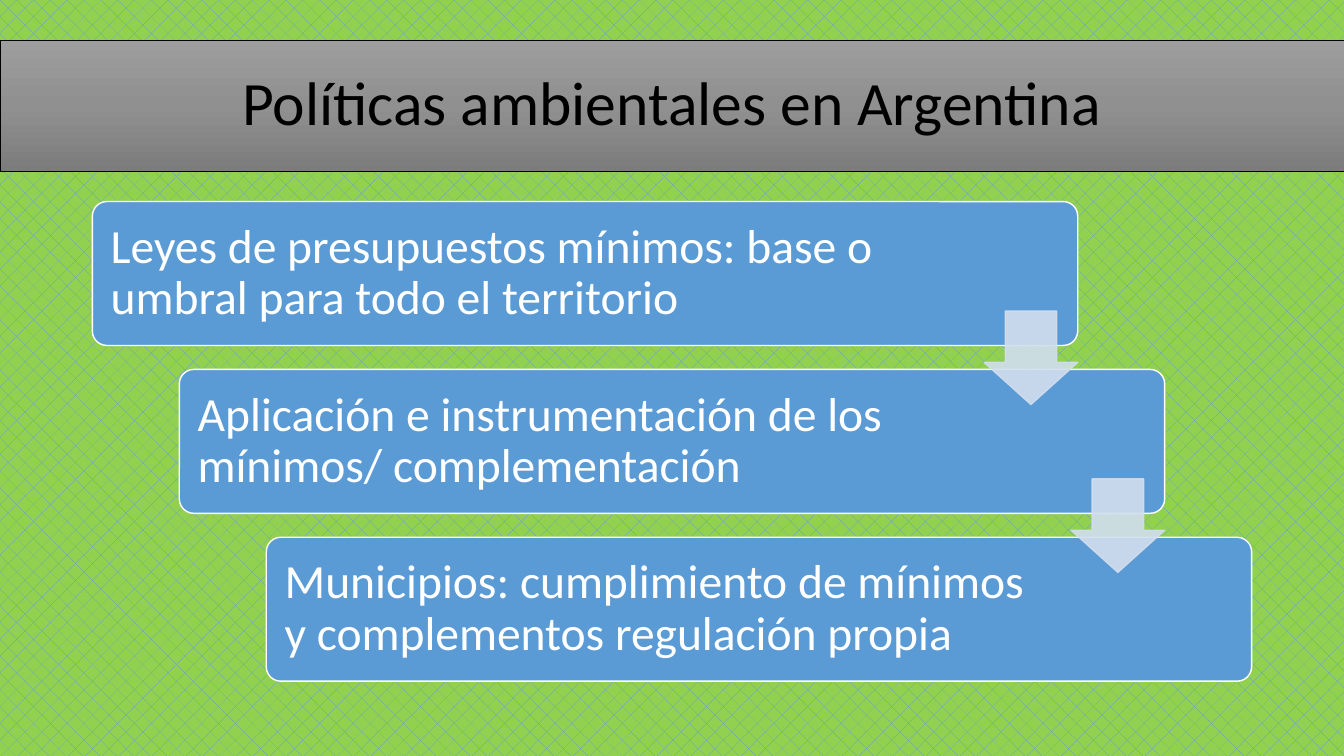
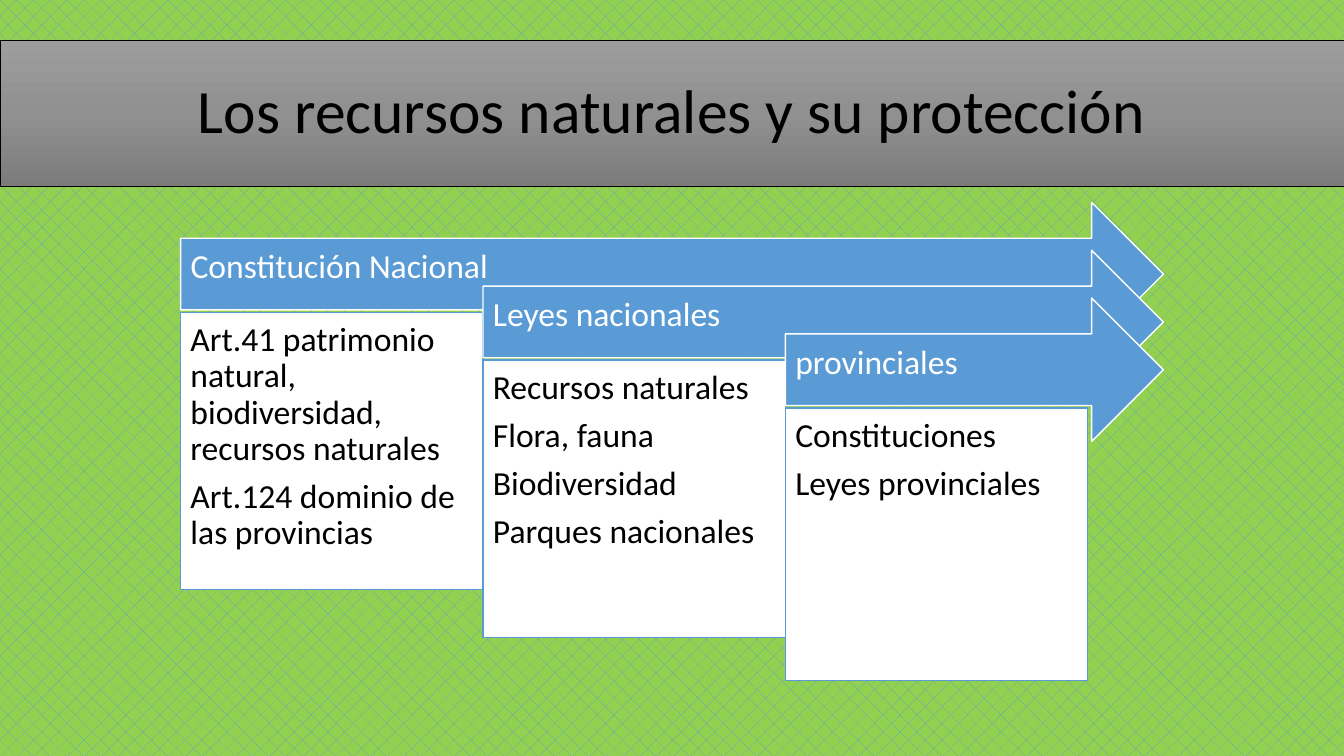
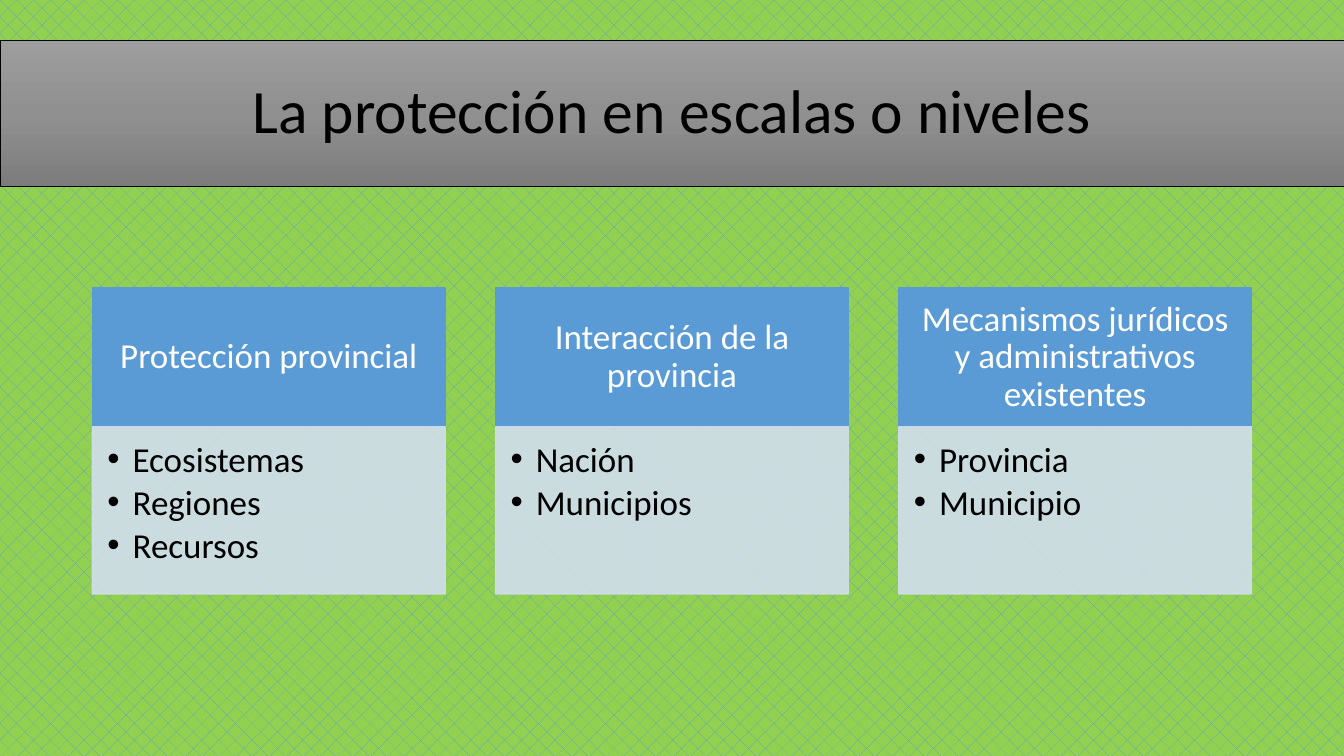
from collections import namedtuple
from copy import deepcopy

from lxml.etree import SubElement
from pptx import Presentation
from pptx.dml.color import RGBColor
from pptx.enum.dml import MSO_PATTERN
from pptx.enum.shapes import MSO_SHAPE
from pptx.enum.text import MSO_ANCHOR, PP_ALIGN
from pptx.oxml.ns import qn
from pptx.util import Inches, Pt

# The slide is a grid of 160 columns by 90 rows, twelve cells to the inch.
COLUMNS, ROWS = 160, 90
CELL = Inches(1) / 12
FONT = "Calibri"
COLORS = {
    "green": "92D050",
    "blue": "5B9BD5",
    "pale": "D2DEEF",
    "white": "FFFFFF",
    "black": "000000",
}
BAND_STOPS = [(0, "9D9D9D"), (0.5, "909090"), (1, "7C7C7C")]
PALE_OPACITY = 90

Box = namedtuple("Box", "left top width height")


def rgb(name):
    return RGBColor.from_string(COLORS[name])


def add_box(page, kind, box, fill=None, line="white", line_width=1,
            adjust=(), opacity=100):
    """Add a preset shape; the box is in grid cells."""
    shape = page.shapes.add_shape(kind, *(round(cells * CELL) for cells in box))
    shape.shadow.inherit = False
    for index, value in enumerate(adjust):
        shape.adjustments[index] = value
    if fill:
        shape.fill.solid()
        shape.fill.fore_color.rgb = rgb(fill)
    shape.line.color.rgb = rgb(line)
    shape.line.width = Pt(line_width)
    if opacity < 100:
        for color in shape._element.spPr.iter(qn("a:srgbClr")):
            SubElement(color, qn("a:alpha"), val=str(opacity * 1000))
    return shape


def add_bullet(para, indent=0.25):
    properties = para._p.get_or_add_pPr()
    properties.set("marL", str(Inches(indent)))
    properties.set("indent", str(-Inches(indent)))
    SubElement(properties, qn("a:buFont"), typeface="Arial")
    SubElement(properties, qn("a:buChar"), char="•")


def write(shape, *lines, size, color="white", align=PP_ALIGN.LEFT,
          anchor=MSO_ANCHOR.MIDDLE, margins=(0.1, 0.1, 0.1, 0.1),
          after=0.35, bullets=False):
    """Fill a shape with paragraphs; `after` is a share of the text size."""
    frame = shape.text_frame
    frame.word_wrap = True
    frame.vertical_anchor = anchor
    (frame.margin_left, frame.margin_top,
     frame.margin_right, frame.margin_bottom) = map(Inches, margins)
    for index, line in enumerate(lines):
        para = frame.add_paragraph() if index else frame.paragraphs[0]
        para.alignment = align
        para.line_spacing = 0.9
        para.space_after = Pt(size * after)
        if bullets:
            add_bullet(para)
        span = para.add_run()
        span.text = line
        span.font.name = FONT
        span.font.size = Pt(size)
        span.font.color.rgb = rgb(color)


def fill_gradient(shape, stops):
    shape.fill.gradient()
    shape.fill.gradient_angle = 270
    stop_list = shape._element.spPr.find(qn("a:gradFill")).find(qn("a:gsLst"))
    stop_list.insert(1, deepcopy(stop_list[0]))
    for stop, (position, color) in zip(shape.fill.gradient_stops, stops):
        stop.position = position
        stop.color.rgb = RGBColor.from_string(color)


def add_page(deck, title, band_rows=17.4):
    """Add a slide with the patterned background and the title band."""
    page = deck.slides.add_slide(deck.slide_layouts[6])
    background = page.background.fill
    background.patterned()
    background.pattern = MSO_PATTERN.DOTTED_DIAMOND
    background.fore_color.rgb = rgb("blue")
    background.back_color.rgb = rgb("green")
    band = add_box(page, MSO_SHAPE.RECTANGLE, Box(0, 4.8, COLUMNS, band_rows),
                   line="black", line_width=0.5)
    fill_gradient(band, BAND_STOPS)
    write(band, title, size=44, color="black", align=PP_ALIGN.CENTER,
          margins=(0.1, 0.05, 0.1, 0.05), after=0)
    return page


def add_staircase(page, area, steps):
    """Cards going down to the right, with an arrow from each to the next."""
    width, height = 0.85 * area.width, 0.3 * area.height
    across = (area.width - width) / (len(steps) - 1)
    down = (area.height - height) / (len(steps) - 1)
    cards = [Box(area.left + index * across, area.top + index * down, width, height)
             for index in range(len(steps))]
    for card, text in zip(cards, steps):
        shape = add_box(page, MSO_SHAPE.ROUNDED_RECTANGLE, card, "blue", adjust=[0.1])
        write(shape, text, size=34, margins=(0.14, 0.14, 1.94, 0.14))
    side = 0.65 * height
    for card in cards[:-1]:
        arrow = Box(card.left + width - side, card.top + 0.76 * height, side, side)
        add_box(page, MSO_SHAPE.DOWN_ARROW, arrow, "pale", "pale",
                adjust=[0.55, 0.45], opacity=PALE_OPACITY)


def add_arrow_columns(page, area, columns, column_width=36):
    """Overlapping arrows with one end point, each heading a panel."""
    for index, (heading, lines) in enumerate(columns):
        offset = index * column_width
        left = area.left + offset
        drop = 0.1 * index
        arrow = add_box(page, MSO_SHAPE.RIGHT_ARROW,
                        Box(left, area.top + drop * area.height,
                            area.width - offset, 0.3 * area.height),
                        "blue", adjust=[0.5, 0.5])
        write(arrow, heading, size=24, margins=(0.1, 0.1, 0.28, 0.23))
        panel_top = drop + 0.23
        panel_height = min(0.58, 1 - panel_top)
        panel = add_box(page, MSO_SHAPE.RECTANGLE,
                        Box(left, area.top + panel_top * area.height,
                            column_width, panel_height * area.height),
                        "white", "blue")
        write(panel, *lines, size=24, color="black", anchor=MSO_ANCHOR.TOP)


def add_list_columns(page, area, columns, column_width=42, header_rows=16.5):
    """Evenly spaced columns: a header above a bulleted list."""
    pitch = (area.width - column_width) / (len(columns) - 1)
    for index, (heading, items) in enumerate(columns):
        left = area.left + index * pitch
        header = add_box(page, MSO_SHAPE.RECTANGLE,
                         Box(left, area.top, column_width, header_rows),
                         "blue", "blue")
        write(header, heading, size=25, align=PP_ALIGN.CENTER,
              margins=(0.19, 0.11, 0.19, 0.11))
        body = add_box(page, MSO_SHAPE.RECTANGLE,
                       Box(left, area.top + header_rows, column_width,
                           area.height - header_rows),
                       "pale", "pale", opacity=PALE_OPACITY)
        write(body, *items, size=25, color="black", anchor=MSO_ANCHOR.TOP,
              margins=(0.15, 0.15, 0.19, 0.22), after=0.15, bullets=True)


def main():
    deck = Presentation()
    deck.slide_width = round(COLUMNS * CELL)
    deck.slide_height = round(ROWS * CELL)

    page = add_page(deck, "Políticas ambientales en Argentina", band_rows=15.6)
    add_staircase(page, Box(11, 24, 138, 57.1), [
        "Leyes de presupuestos mínimos: base o umbral para todo el territorio",
        "Aplicación e instrumentación de los mínimos/ complementación",
        "Municipios: cumplimiento de mínimos y complementos regulación propia",
    ])

    page = add_page(deck, "Los recursos naturales y su protección")
    add_arrow_columns(page, Box(21.5, 24.1, 117, 56.9), [
        ("Constitución Nacional",
         ["Art.41 patrimonio natural, biodiversidad, recursos naturales",
          "Art.124 dominio de las provincias"]),
        ("Leyes nacionales",
         ["Recursos naturales", "Flora, fauna", "Biodiversidad",
          "Parques nacionales"]),
        ("provinciales", ["Constituciones", "Leyes provinciales"]),
    ])

    page = add_page(deck, "La protección en escalas o niveles")
    add_list_columns(page, Box(11, 34.3, 138, 36.4), [
        ("Protección provincial", ["Ecosistemas", "Regiones", "Recursos"]),
        ("Interacción de la provincia", ["Nación", "Municipios"]),
        ("Mecanismos jurídicos y administrativos existentes",
         ["Provincia", "Municipio"]),
    ])

    deck.save("out.pptx")


if __name__ == "__main__":
    main()
